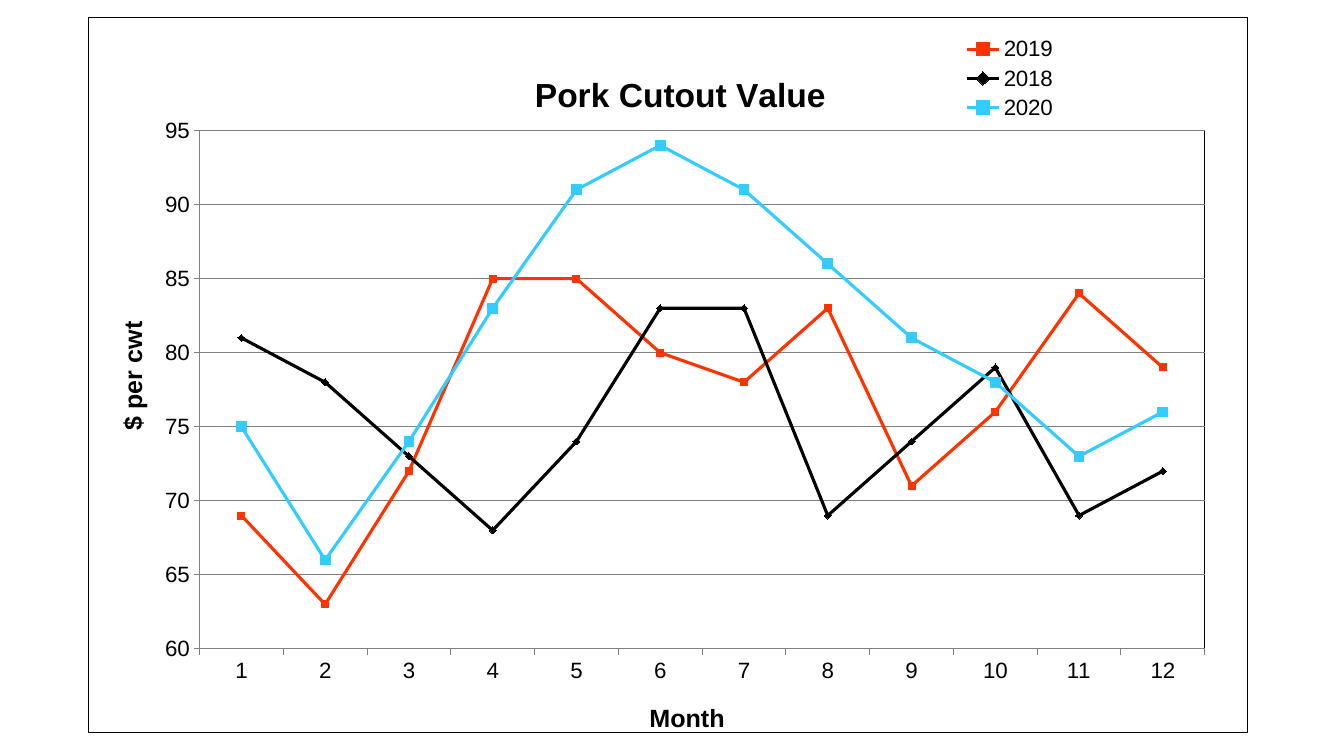
from lxml import etree
from pptx import Presentation
from pptx.chart.data import CategoryChartData
from pptx.dml.color import RGBColor
from pptx.enum.chart import XL_CHART_TYPE as Kind, XL_LEGEND_POSITION as Side
from pptx.enum.chart import XL_MARKER_STYLE as Mark, XL_TICK_MARK as Tick
from pptx.oxml import parse_xml
from pptx.oxml.ns import nsdecls, qn
from pptx.util import Inches, Pt

RED = RGBColor(0xFF, 0x33, 0x00)
BLACK = RGBColor(0, 0, 0)
BLUE = RGBColor(0x33, 0xCC, 0xFF)
GRAY = RGBColor(0x80, 0x80, 0x80)
FONT = "Arial"


def place(part, index, **shares):
    """Place a chart part by shares of the chart's size."""
    for old in part.findall(qn("c:layout")):
        part.remove(old)
    layout = etree.Element(qn("c:layout"))
    manual = etree.SubElement(layout, qn("c:manualLayout"))
    if part.tag == qn("c:plotArea"):
        etree.SubElement(manual, qn("c:layoutTarget"), val="inner")
    for side in "xy":
        etree.SubElement(manual, qn(f"c:{side}Mode"), val="edge")
    for key, share in shares.items():
        etree.SubElement(manual, qn(f"c:{key}"), val=str(share))
    part.insert(index, layout)


def frame():
    """White fill with a thin black outline."""
    return parse_xml(
        f'<c:spPr {nsdecls("c", "a")}>'
        '<a:solidFill><a:srgbClr val="FFFFFF"/></a:solidFill>'
        f'<a:ln w="{Pt(0.75)}"><a:solidFill><a:srgbClr val="{BLACK}"/>'
        '</a:solidFill></a:ln></c:spPr>')


# Slide
deck = Presentation()
deck.slide_width, deck.slide_height = Inches(13.33), Inches(7.5)
slide = deck.slides.add_slide(deck.slide_layouts[6])

# Data by month: name, values, colour, marker, marker size
years = [
    ("2019", [69, 63, 72, 85, 85, 80, 78, 83, 71, 76, 84, 79],
     RED, Mark.SQUARE, 5),
    ("2018", [81, 78, 73, 68, 74, 83, 83, 69, 74, 79, 69, 72],
     BLACK, Mark.DIAMOND, 5),
    ("2020", [75, 66, 74, 83, 91, 94, 91, 86, 81, 78, 73, 76],
     BLUE, Mark.SQUARE, 7),
]
data = CategoryChartData(number_format="0")
data.categories = [str(month) for month in range(1, 13)]
for name, values, *_ in years:
    data.add_series(name, values)

# Chart
chart = slide.shapes.add_chart(
    Kind.LINE_MARKERS, Inches(0.87), Inches(0.17),
    Inches(11.51), Inches(7.17), data).chart
chart.font.name, chart.font.size = FONT, Pt(18)
chart.font.color.rgb = BLACK
chart.plots[0].vary_by_categories = False

# Lines and markers
for line, (_, _, color, mark, size) in zip(chart.plots[0].series, years):
    line.smooth = False
    line.format.line.color.rgb = color
    line.format.line.width = Pt(2.25)
    line.marker.style, line.marker.size = mark, size
    line.marker.format.fill.solid()
    line.marker.format.fill.fore_color.rgb = color
    line.marker.format.line.color.rgb = color

# Axes
months, price = chart.category_axis, chart.value_axis
for axis in (months, price):
    axis.major_tick_mark, axis.minor_tick_mark = Tick.OUTSIDE, Tick.NONE
    axis.tick_labels.font.size = Pt(16)
    axis.tick_labels.font.name = FONT
    axis.tick_labels.font.color.rgb = BLACK
    axis.format.line.color.rgb = GRAY
price.minimum_scale, price.maximum_scale, price.major_unit = 60, 95, 5
price.tick_labels.number_format = "0"
price.tick_labels.number_format_is_linked = False
price.has_major_gridlines = True
price.major_gridlines.format.line.color.rgb = GRAY

# Titles
for owner, text, size, x, y in [
        (chart, "Pork Cutout Value", 24, 0.38, 0.07),
        (months, "Month", 18, 0.48, 0.95),
        (price, "$ per cwt", 18, 0.02, 0.42)]:
    owner.has_title = True
    title = owner.chart_title if owner is chart else owner.axis_title
    run = title.text_frame.paragraphs[0].add_run()
    run.text = text
    run.font.name, run.font.size, run.font.bold = FONT, Pt(size), True
    run.font.color.rgb = BLACK
    place(title._element, 1, x=x, y=y)
body = price.axis_title.text_frame._txBody.find(qn("a:bodyPr"))
body.set("rot", "-5400000")
body.set("vert", "horz")

# Legend
chart.has_legend = True
legend = chart.legend
legend.position, legend.include_in_layout = Side.RIGHT, False
legend.font.name, legend.font.size = FONT, Pt(16)
legend.font.color.rgb = BLACK
place(legend._element, 1, x=0.75, y=0.02, w=0.09, h=0.13)

# Plot place and frames
root = chart._chartSpace
area = root.chart.plotArea
place(area, 0, x=0.096, y=0.158, w=0.867, h=0.725)
area.append(frame())
root.find(qn("c:txPr")).addprevious(frame())

deck.save("out.pptx")
